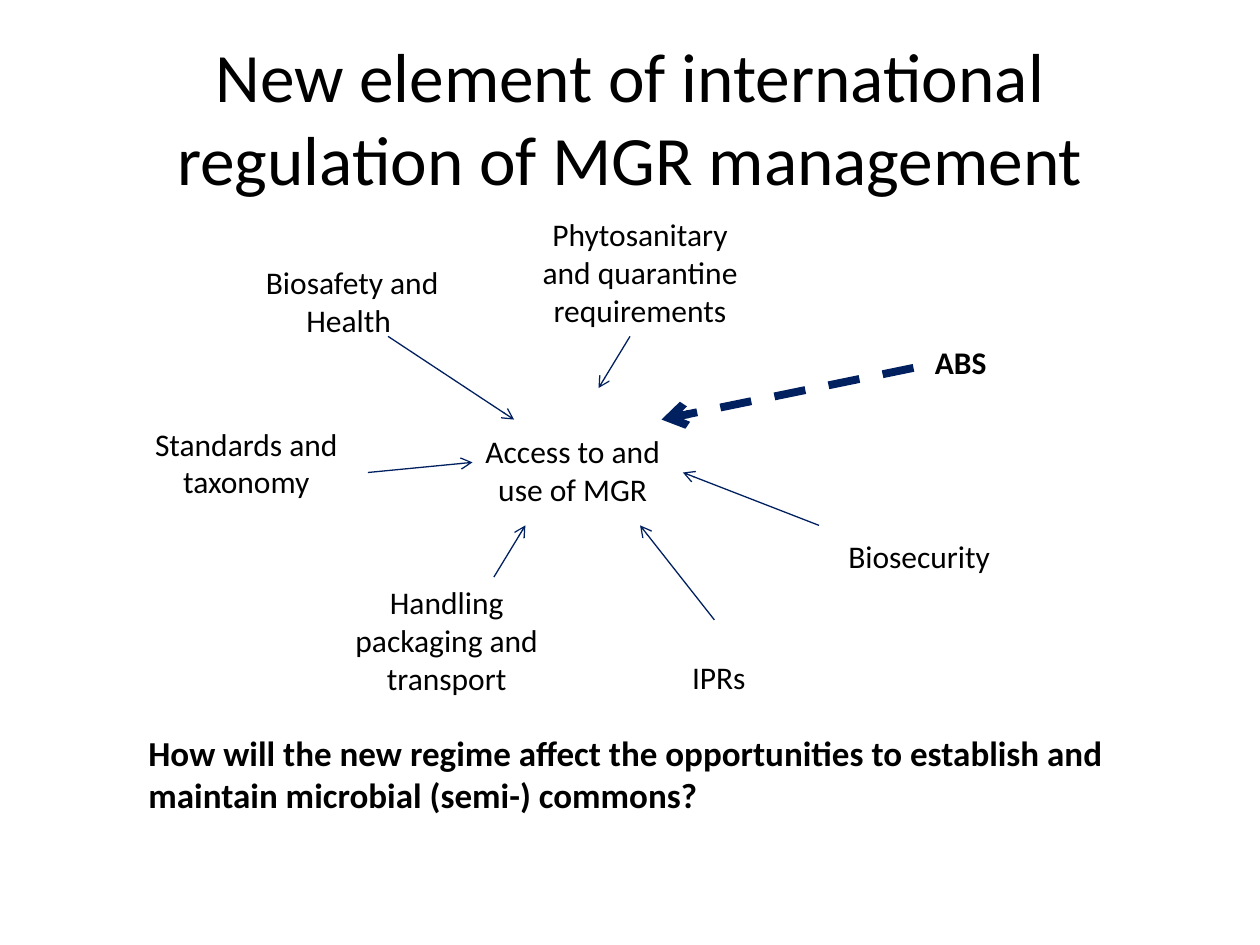
from dataclasses import dataclass

from lxml import etree
from pptx import Presentation
from pptx.dml.color import RGBColor
from pptx.enum import dml, shapes, text
from pptx.oxml import ns
from pptx.util import Inches, Pt


@dataclass(frozen=True)
class Theme:
    font: str = "Calibri"
    ink: RGBColor = RGBColor(0, 0, 0)
    navy: RGBColor = RGBColor(0x00, 0x20, 0x60)
    title: float = 39.6
    label: float = 18
    ask: float = 20
    thin: float = 0.75
    thick: float = 4.5


THEME = Theme()
WIDE = 1.75

# Text, left, top, width, height, bold
LABELS = [
    ("Access to and use of MGR", 3.67, 3.38, WIDE, 0.71, False),
    ("Biosafety and Health ", 1.92, 2.04, WIDE, 0.71, False),
    ("Phytosanitary and quarantine requirements", 4.08, 1.66, 2, 1.01, False),
    ("Standards and taxonomy", 1.08, 3.32, WIDE, 0.71, False),
    ("Handling packaging and transport", 2.67, 4.58, WIDE, 1.01, False),
    ("IPRs", 4.83, 5.17, WIDE, 0.4, False),
    ("Biosecurity", 6.42, 4.21, WIDE, 0.4, False),
    ("ABS", 6.75, 2.67, WIDE, 0.4, True),
]

# Start and end of each arrow toward the centre
ARROWS = [
    ((3.08, 2.67), (4.08, 3.33)),
    ((2.92, 3.75), (3.75, 3.67)),
    ((3.92, 4.58), (4.17, 4.17)),
    ((5.67, 4.92), (5.08, 4.17)),
    ((6.5, 4.17), (5.42, 3.75)),
    ((5, 2.67), (4.75, 3.08)),
]
NEW = ((7.25, 2.92), (5.25, 3.33))


def add_text(slide, words, box, size, bold=False,
             align=text.PP_ALIGN.CENTER, anchor=text.MSO_ANCHOR.TOP):
    frame = slide.shapes.add_textbox(*map(Inches, box)).text_frame
    frame.word_wrap = True
    frame.vertical_anchor = anchor
    para = frame.paragraphs[0]
    para.alignment = align
    run = para.add_run()
    run.text = words
    font = run.font
    font.name, font.size, font.bold = THEME.font, Pt(size), bold
    font.color.rgb = THEME.ink


def add_arrow(slide, start, end, width, dash=None):
    arrow = slide.shapes.add_connector(
        shapes.MSO_CONNECTOR.STRAIGHT, *map(Inches, start + end))
    line = arrow.line
    line.color.rgb = THEME.navy
    line.width = Pt(width)
    if dash:
        line.dash_style = dash
    # Open arrowhead, no shadow
    props = arrow.element.spPr
    tip = etree.SubElement(props.find(ns.qn("a:ln")), ns.qn("a:tailEnd"))
    tip.set("type", "arrow")
    etree.SubElement(props, ns.qn("a:effectLst"))


def main():
    deck = Presentation()
    deck.slide_width, deck.slide_height = Inches(10), Inches(7.5)
    slide = deck.slides.add_slide(deck.slide_layouts[6])

    # Title
    add_text(slide, "New element of international regulation of MGR management",
             (0.5, 0.3, 9, 1.25), THEME.title, anchor=text.MSO_ANCHOR.MIDDLE)

    # Centre and its surrounding rules
    for words, *box, bold in LABELS:
        add_text(slide, words, box, THEME.label, bold)

    # Arrows, with the new element dashed
    for start, end in ARROWS:
        add_arrow(slide, start, end, THEME.thin)
    add_arrow(slide, *NEW, THEME.thick, dml.MSO_LINE.DASH)

    # Closing question
    add_text(slide, "How will the new regime affect the opportunities to "
             "establish and maintain microbial (semi-) commons?",
             (1.08, 5.76, 8.17, 0.77), THEME.ask, True, text.PP_ALIGN.LEFT)

    deck.save("out.pptx")


if __name__ == "__main__":
    main()
